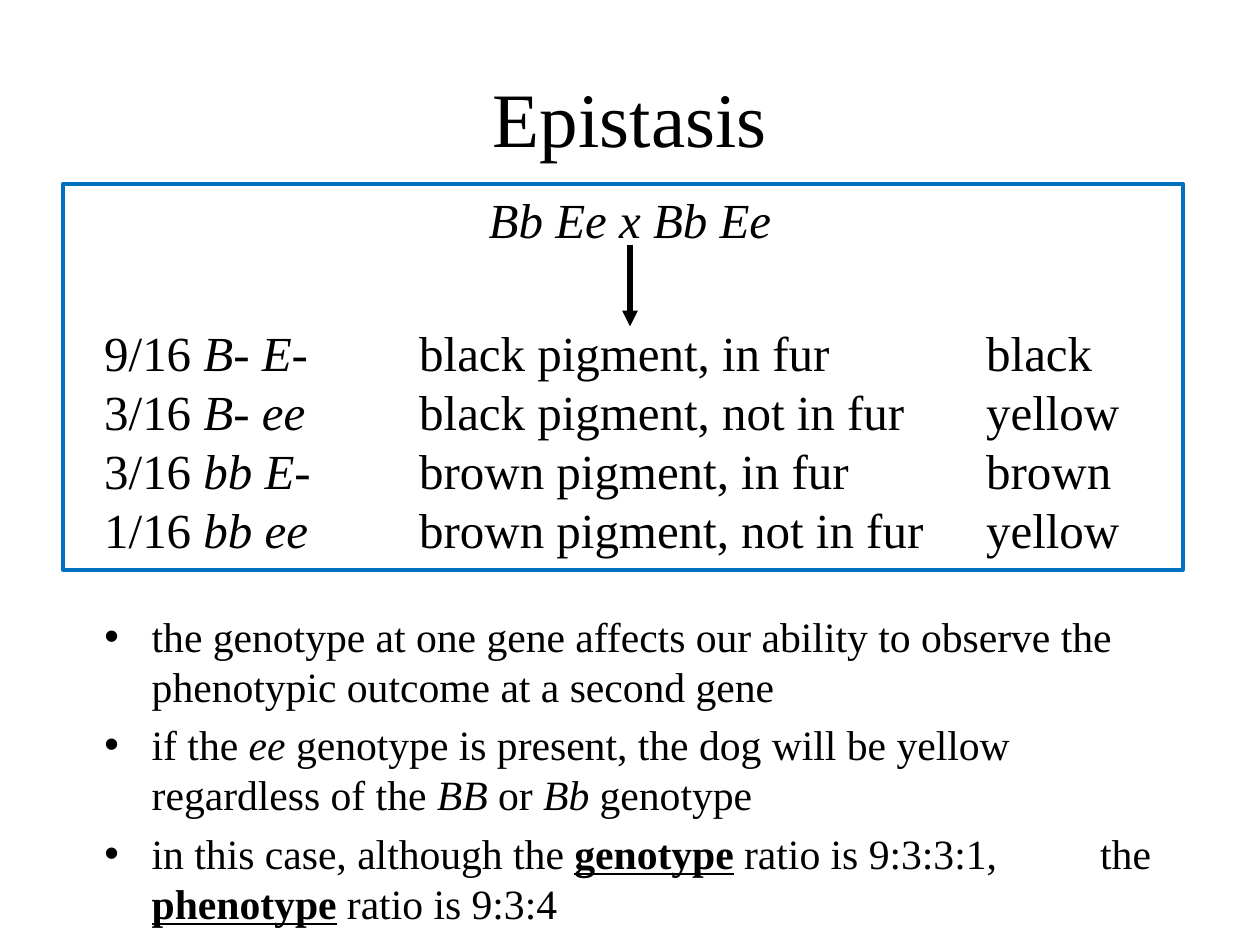
from lxml.etree import SubElement
from pptx import Presentation
from pptx.dml.color import RGBColor
from pptx.enum.shapes import MSO_CONNECTOR as Connector, MSO_SHAPE as Shape
from pptx.enum.text import MSO_ANCHOR as Anchor, MSO_AUTO_SIZE as AutoSize, PP_ALIGN as Align
from pptx.oxml.ns import qn
from pptx.util import Pt

BLACK = RGBColor(0x00, 0x00, 0x00)
BLUE = RGBColor(0x00, 0x70, 0xC0)
FONT = "Times New Roman"
PLAIN = {}
ITALIC = {"italic": True}
KEY = {"bold": True, "underline": True}

OFFSPRING = [
    ("9/16 ", "B- E-", "black pigment, in fur", "black"),
    ("3/16 ", "B- ee", "black pigment, not in fur", "yellow"),
    ("3/16 ", "bb E-", "brown pigment, in fur", "brown"),
    ("1/16 ", "bb ee", "brown pigment, not in fur", "yellow"),
]
POINTS = [
    [("the genotype at one gene affects our ability to observe the "
      "phenotypic outcome at a second gene", PLAIN)],
    [("if the ", PLAIN), ("ee ", ITALIC),
     ("genotype is present, the dog will be yellow regardless of the ", PLAIN),
     ("BB", ITALIC), (" or ", PLAIN), ("Bb", ITALIC), (" genotype", PLAIN)],
    [("in this case, although the ", PLAIN), ("genotype", KEY),
     (" ratio is 9:3:3:1,\tthe ", PLAIN), ("phenotype", KEY),
     (" ratio is 9:3:4", PLAIN)],
]


def place(shape, left, top, width, height):
    """Move and size a shape, in points."""
    for side, value in zip(("left", "top", "width", "height"), (left, top, width, height)):
        setattr(shape, side, Pt(value))


def add_runs(paragraph, runs, size):
    """Fill a paragraph with (text, format) runs."""
    for text, style in runs:
        run = paragraph.add_run()
        run.text = text
        run.font.color.rgb = BLACK
        for name, value in {"name": FONT, "size": Pt(size), **style}.items():
            setattr(run.font, name, value)


def fill_frame(frame, paragraphs, size, align=Align.LEFT, before=0, tabs=(), bullet=False):
    """Write formatted paragraphs into a text frame."""
    for index, runs in enumerate(paragraphs):
        paragraph = frame.add_paragraph() if index else frame.paragraphs[0]
        paragraph.alignment = align
        paragraph.space_before = Pt(before)
        add_runs(paragraph, runs, size)
        properties = paragraph._p.get_or_add_pPr()
        if bullet:
            properties.set("marL", str(Pt(27)))
            properties.set("indent", str(Pt(-27)))
            SubElement(properties, qn("a:buChar"), char="•")
        if tabs:
            stops = SubElement(properties, qn("a:tabLst"))
            for stop in tabs:
                SubElement(stops, qn("a:tab"), pos=str(Pt(stop)), algn="l")


def format_frame(frame, **extra):
    """Apply the common frame settings."""
    for name, value in {"word_wrap": True, "auto_size": AutoSize.NONE, **extra}.items():
        setattr(frame, name, value)


def add_text(slide, box, paragraphs, **style):
    """Add a text box with formatted paragraphs."""
    frame = slide.shapes.add_textbox(*map(Pt, box)).text_frame
    format_frame(frame)
    fill_frame(frame, paragraphs, 28, **style)


def add_arrow(slide, x, top, bottom):
    """Add a downward arrow."""
    arrow = slide.shapes.add_connector(Connector.STRAIGHT, Pt(x), Pt(top), Pt(x), Pt(bottom))
    arrow.line.color.rgb = BLACK
    arrow.line.width = Pt(3)
    SubElement(arrow.line._get_or_add_ln(), qn("a:tailEnd"), type="triangle")
    SubElement(arrow._element.spPr, qn("a:effectLst"))


def add_border(slide, box):
    """Add the unfilled frame around the cross."""
    border = slide.shapes.add_shape(Shape.RECTANGLE, *map(Pt, box))
    border.shadow.inherit = False
    border.fill.background()
    border.line.color.rgb = BLUE
    border.line.width = Pt(2.25)


def main():
    """Build the epistasis slide."""
    deck = Presentation()
    deck.slide_width, deck.slide_height = Pt(720), Pt(540)
    slide = deck.slides.add_slide(deck.slide_layouts[1])

    title, body = slide.placeholders
    place(title, 36, 21.6, 648, 90)
    format_frame(title.text_frame, vertical_anchor=Anchor.MIDDLE)
    fill_frame(title.text_frame, [[("Epistasis", PLAIN)]], 44, align=Align.CENTER)

    place(body, 52.5, 345.5, 615, 160)
    format_frame(body.text_frame)
    fill_frame(body.text_frame, POINTS, 23.8, before=4.8, tabs=[569], bullet=True)

    add_text(slide, (271, 105, 178, 42), [[("Bb Ee x Bb Ee", ITALIC)]], align=Align.CENTER)
    rows = [[(share, PLAIN), (genotype, ITALIC), (f"\t{pigment}\t{coat}", PLAIN)]
            for share, genotype, pigment, coat in OFFSPRING]
    add_text(slide, (52.5, 181, 615, 145), rows, tabs=[180, 504])
    add_arrow(slide, 360, 140, 186.5)
    add_border(slide, (36, 105, 640, 220.5))

    deck.save("out.pptx")


if __name__ == "__main__":
    main()
